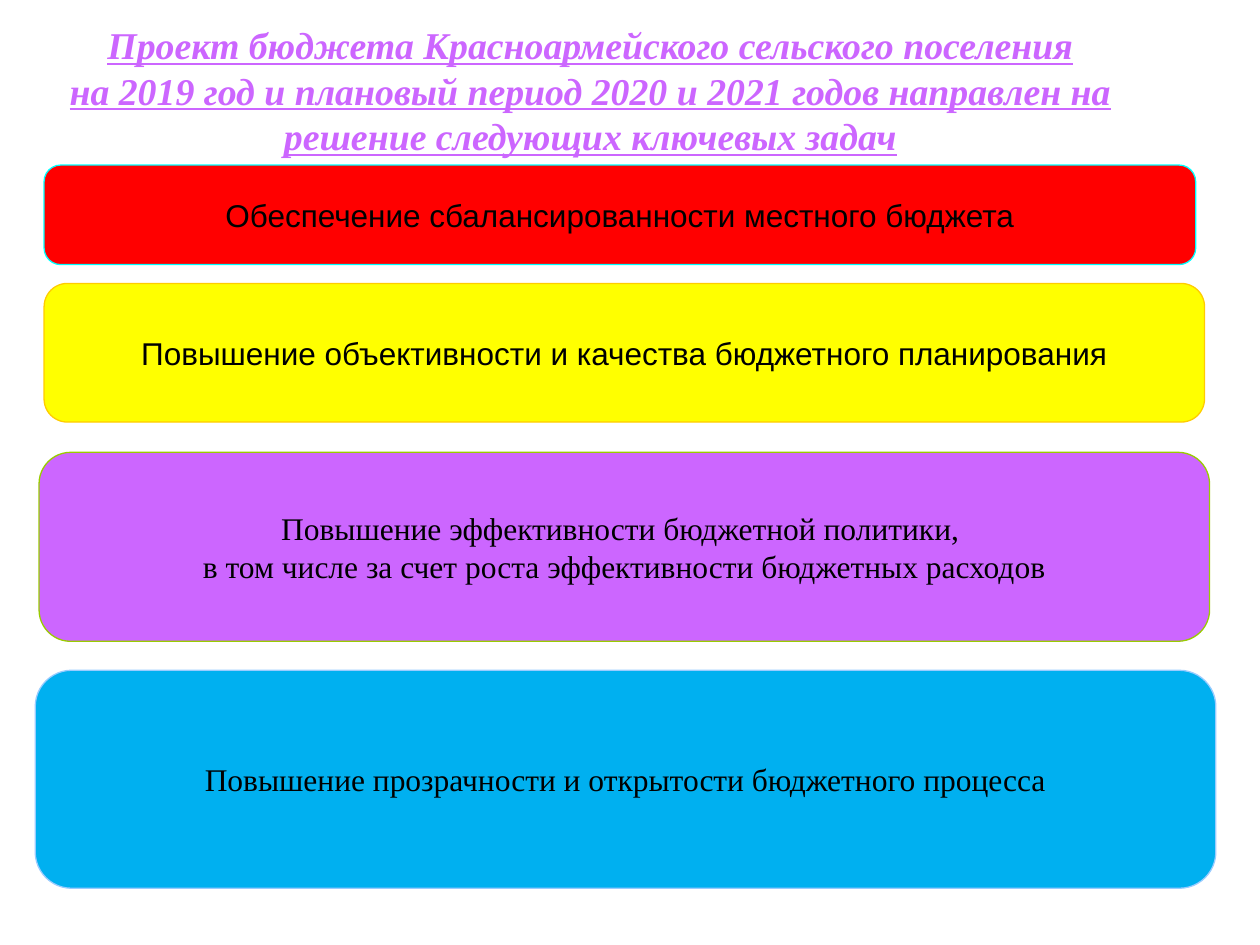
import pptx
import pptx.util
import pptx.dml.color
import pptx.enum.shapes
import pptx.enum.text

Inches = pptx.util.Inches
CENTER = pptx.enum.text.PP_ALIGN.CENTER
MIDDLE = pptx.enum.text.MSO_ANCHOR.MIDDLE

# Content: "\v" is a line break, "\n" starts a paragraph
HEADING = ("Проект бюджета Красноармейского сельского поселения\v"
           "на 2019 год и плановый период 2020 и 2021 годов направлен на "
           "решение следующих ключевых задач")
HEADING_BOX = (0, 0.28, 9.37, 0.87)

# Text, font role, fill, outline, box (left, top, width, height)
TASKS = [
    ("Обеспечение сбалансированности местного бюджета",
     "sans", "FF0000", "00FFFF", (0.35, 1.31, 9.14, 0.79)),
    ("Повышение объективности и качества бюджетного планирования",
     "sans", "FFFF00", "FFCC00", (0.35, 2.25, 9.21, 1.1)),
    ("Повышение эффективности бюджетной политики, \n"
     "в том числе за счет роста эффективности бюджетных расходов",
     "serif", "CC66FF", "99CC00", (0.31, 3.59, 9.29, 1.5)),
    ("Повышение прозрачности и открытости бюджетного процесса",
     "serif", "00B0F0", "99CCFF", (0.28, 5.32, 9.37, 1.73)),
]

THEME = {
    "sans": "Arial", "serif": "Times New Roman",
    "heading_color": "CC66FF", "task_color": "000000",
    "heading_size": 21.6, "task_size": 18,
    "outline": 0.75, "corner": 0.167,
}


def rgb(value):
    return pptx.dml.color.RGBColor.from_string(value)


def write(frame, text, font, size, color, emphasis=None):
    """Fill a text frame with centred text in one style."""
    frame.text = text
    frame.vertical_anchor = MIDDLE
    for paragraph in frame.paragraphs:
        paragraph.alignment = CENTER
        for run in paragraph.runs:
            run.font.name = font
            run.font.size = pptx.util.Pt(size)
            run.font.color.rgb = rgb(color)
            run.font.bold = run.font.italic = run.font.underline = emphasis


def add_heading(slide):
    heading = slide.shapes.title
    heading.left, heading.top, heading.width, heading.height = map(
        Inches, HEADING_BOX)
    heading.text_frame.auto_size = pptx.enum.text.MSO_AUTO_SIZE.NONE
    write(heading.text_frame, HEADING, THEME["serif"],
          THEME["heading_size"], THEME["heading_color"], True)


def add_task(slide, text, font, fill, outline, box):
    task = slide.shapes.add_shape(
        pptx.enum.shapes.MSO_SHAPE.ROUNDED_RECTANGLE, *map(Inches, box))
    task.adjustments[0] = THEME["corner"]
    task.shadow.inherit = False
    task.fill.solid()
    task.fill.fore_color.rgb = rgb(fill)
    task.line.color.rgb = rgb(outline)
    task.line.width = pptx.util.Pt(THEME["outline"])
    task.text_frame.word_wrap = False
    write(task.text_frame, text, THEME[font],
          THEME["task_size"], THEME["task_color"])


def main():
    deck = pptx.Presentation()
    deck.slide_width, deck.slide_height = Inches(10), Inches(7.5)
    slide = deck.slides.add_slide(deck.slide_layouts[0])

    # The subtitle placeholder is not used
    subtitle = slide.placeholders[1].element
    subtitle.getparent().remove(subtitle)

    add_heading(slide)
    for task in TASKS:
        add_task(slide, *task)
    deck.save("out.pptx")


if __name__ == "__main__":
    main()
